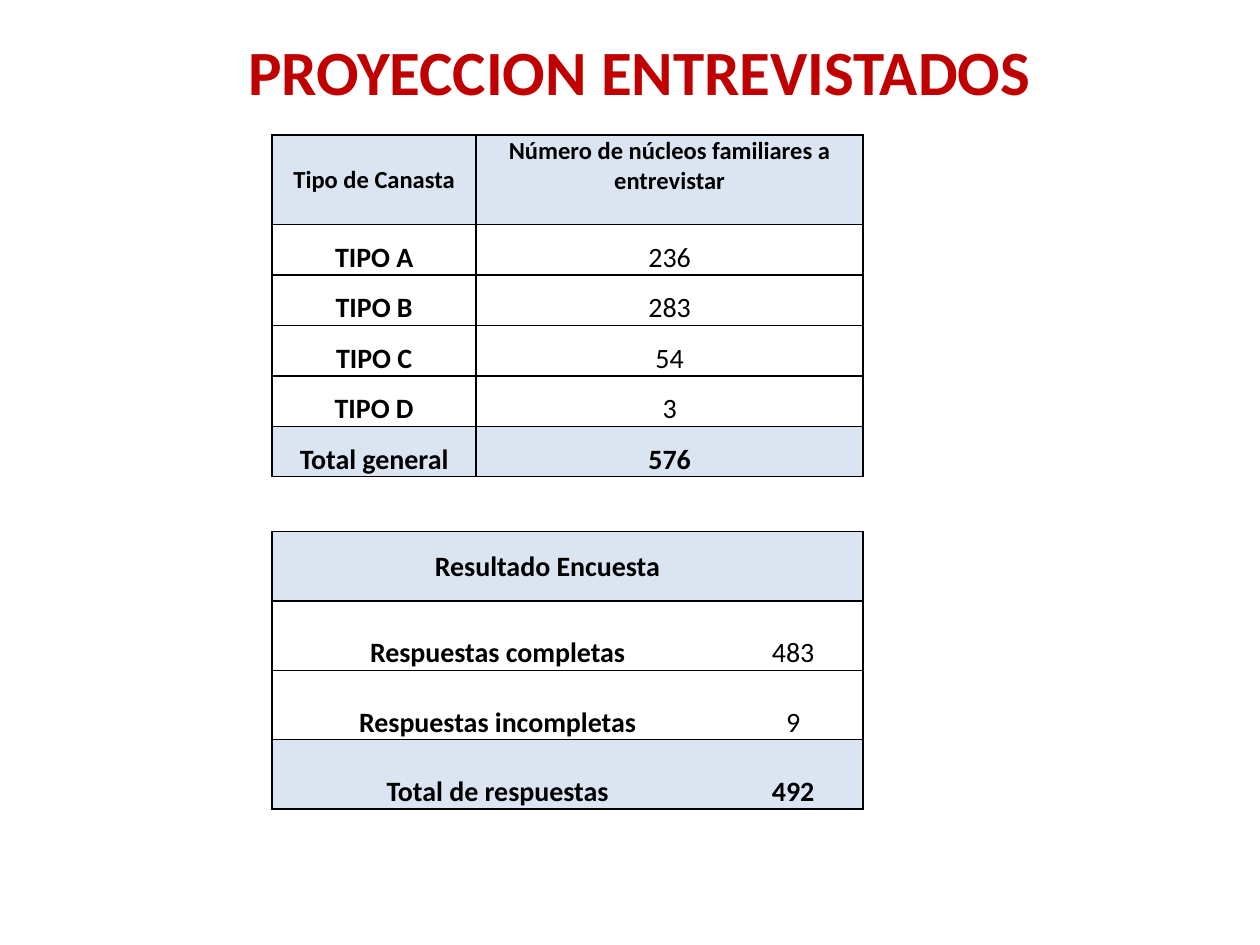
from lxml.etree import SubElement
from pptx import Presentation
from pptx.dml.color import RGBColor
from pptx.enum.text import MSO_ANCHOR, PP_ALIGN
from pptx.oxml.ns import qn
from pptx.util import Inches, Pt

RED = RGBColor(0xC0, 0x00, 0x00)
BLACK = RGBColor(0x00, 0x00, 0x00)
PALE = RGBColor(0xDB, 0xE5, 0xF1)


class Deck:
    font = "Calibri"
    line = Pt(1)

    def __init__(self, slide):
        self.slide = slide

    def label(self, frame, text, size, color=BLACK, bold=True):
        frame.text = text
        para = frame.paragraphs[0]
        para.alignment = PP_ALIGN.CENTER
        for run in para.runs:
            font = run.font
            font.name, font.size, font.bold = self.font, Pt(size), bold
            font.color.rgb = color

    def title(self, text, left, top, width, height):
        box = self.slide.shapes.add_textbox(
            Inches(left), Inches(top), Inches(width), Inches(height))
        box.text_frame.word_wrap = True
        self.label(box.text_frame, text, 36, RED)

    def border(self, cell, hidden):
        props = cell._tc.get_or_add_tcPr()
        for i, side in enumerate("LRTB"):
            line = SubElement(props, qn(f"a:ln{side}"), w=str(self.line))
            if side in hidden:
                SubElement(line, qn("a:noFill"))
            else:
                fill = SubElement(line, qn("a:solidFill"))
                SubElement(fill, qn("a:srgbClr"), val=str(BLACK))
            props.insert(i, line)  # borders come before the fill

    def table(self, rows, left, top, widths, heights, head=16, split=True):
        grid = self.slide.shapes.add_table(
            len(rows), len(widths), Inches(left), Inches(top),
            Inches(sum(widths)), Inches(sum(heights))).table
        grid.first_row = grid.horz_banding = False
        for col, width in zip(grid.columns, widths):
            col.width = Inches(width)
        for r, (row, height) in enumerate(zip(rows, heights)):
            grid.rows[r].height = Inches(height)
            first, last = r == 0, r == len(rows) - 1
            for c, text in enumerate(row):
                cell = grid.cell(r, c)
                cell.margin_left = cell.margin_right = Inches(0.01)
                cell.margin_top, cell.margin_bottom = Inches(0.01), 0
                cell.vertical_anchor = (
                    MSO_ANCHOR.MIDDLE if first else MSO_ANCHOR.BOTTOM)
                self.label(cell.text_frame, text, head if first else 16,
                           bold=first or last or c == 0)
                if first or last:
                    cell.fill.solid()
                    cell.fill.fore_color.rgb = PALE
                else:
                    cell.fill.background()
                self.border(cell, "" if split else "RL"[c])
        return grid


def main():
    prs = Presentation()
    prs.slide_width, prs.slide_height = Inches(10), Inches(7.5)
    deck = Deck(prs.slides.add_slide(prs.slide_layouts[6]))

    # Planned interviews by basket type
    plan = [
        ("Tipo de Canasta", "Número de núcleos familiares a entrevistar"),
        ("TIPO A", "236"),
        ("TIPO B", "283"),
        ("TIPO C", "54"),
        ("TIPO D", "3"),
        ("Total general", "576"),
    ]
    grid = deck.table(plan, 2.16, 1.07, [1.62, 3.07],
                      [0.71] + [0.4] * 5, head=14)
    grid.cell(0, 1).margin_bottom = Inches(0.23)

    # Survey results
    result = [
        ("Resultado Encuesta", ""),
        ("Respuestas completas", "483"),
        ("Respuestas incompletas", "9"),
        ("Total de respuestas", "492"),
    ]
    grid = deck.table(result, 2.16, 4.22, [3.58, 1.11], [0.55] * 4,
                      split=False)
    grid.cell(0, 0).margin_left = Inches(0.8)

    # Title
    deck.title("PROYECCION ENTREVISTADOS", 1.06, 0.21, 8.03, 0.71)

    prs.save("out.pptx")


if __name__ == "__main__":
    main()
